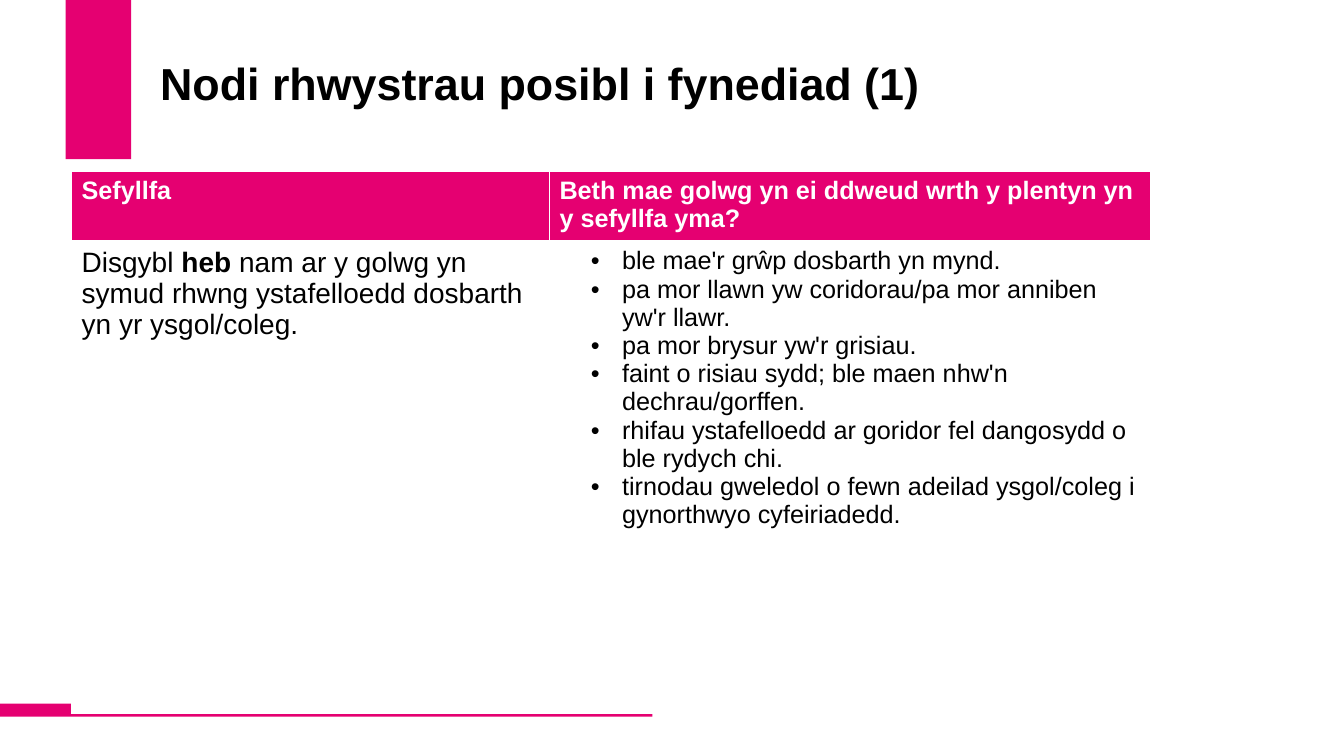
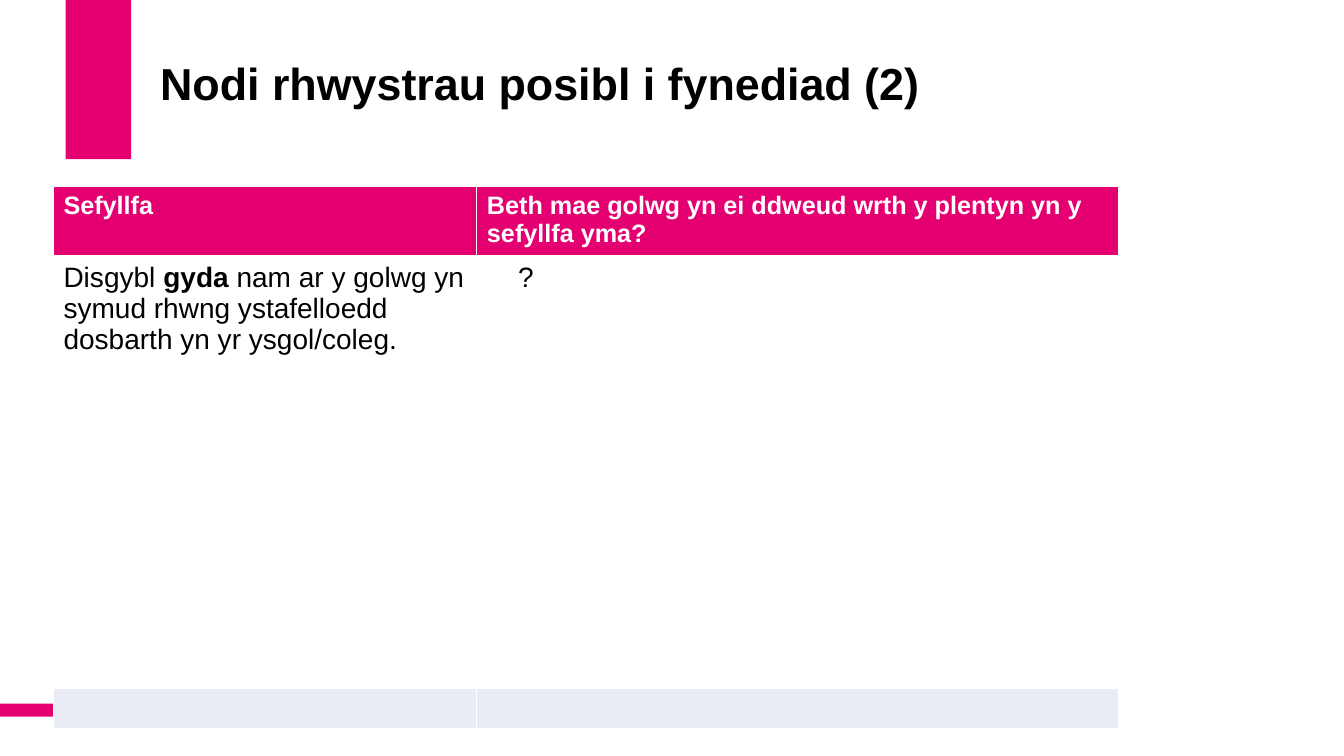
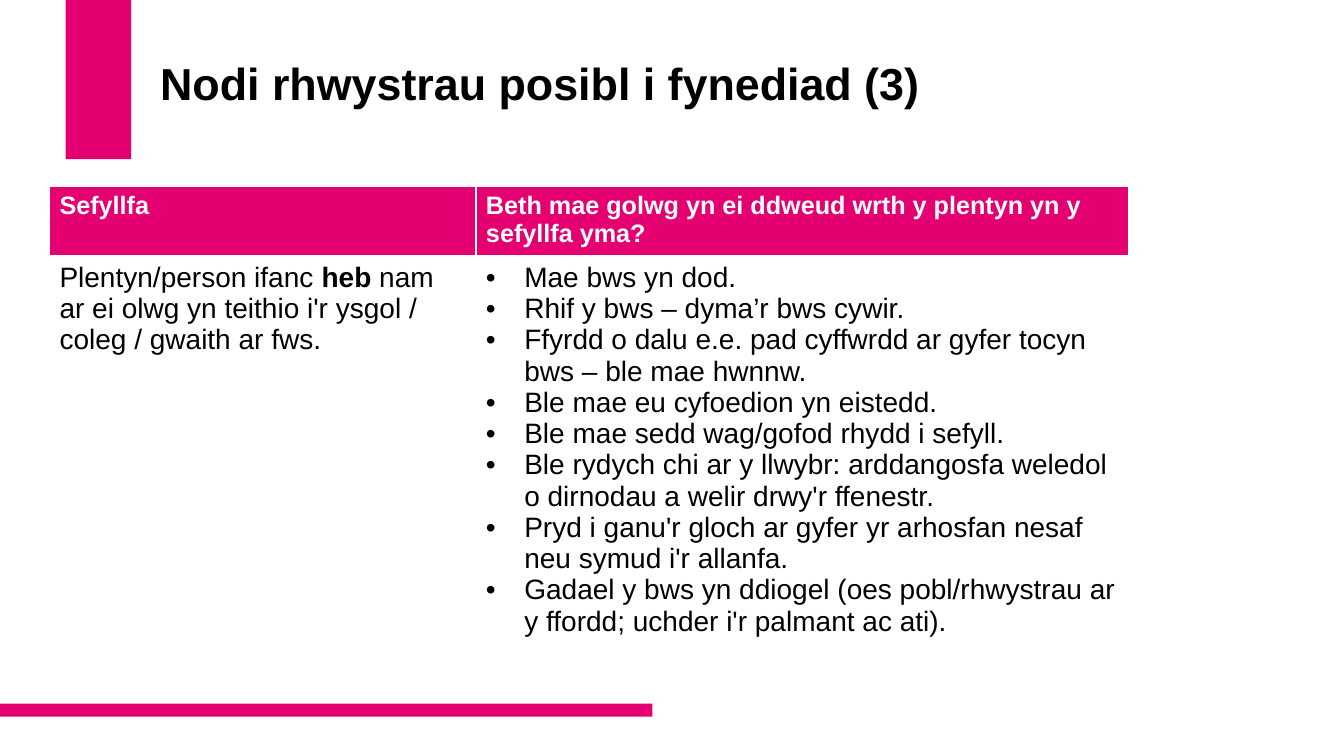
import pptx
import pptx.dml.color
import pptx.enum.shapes
import pptx.enum.text
import pptx.oxml.ns
import pptx.util
from lxml import etree

Inches = pptx.util.Inches
Pt = pptx.util.Pt
qn = pptx.oxml.ns.qn

COLOURS = {"accent": "E50071", "text": "000000", "paper": "FFFFFF", "stripe": "E9EBF5"}
FONT = "Arial"
HEADINGS = ["Sefyllfa", "Beth mae golwg yn ei ddweud wrth y plentyn yn y sefyllfa yma?"]
HEADING_HEIGHT = 0.64

SLIDES = [
    {
        "left": 0.71, "top": 1.7, "columns": [4.74, 5.96], "body_height": 4.68,
        "situation": ["Disgybl ", "heb", " nam ar y golwg yn symud rhwng ystafelloedd dosbarth yn yr ysgol/coleg."],
        "answers": [
            "ble mae'r grŵp dosbarth yn mynd.",
            "pa mor llawn yw coridorau/pa mor anniben yw'r llawr.",
            "pa mor brysur yw'r grisiau.",
            "faint o risiau sydd; ble maen nhw'n dechrau/gorffen.",
            "rhifau ystafelloedd ar goridor fel dangosydd o ble rydych chi.",
            "tirnodau gweledol o fewn adeilad ysgol/coleg i gynorthwyo cyfeiriadedd.",
        ],
        "answer_size": 18, "margin": 0.62, "hanging": 0.31,
    },
    {
        "left": 0.53, "top": 1.85, "columns": [4.2, 6.36], "body_height": 4.28,
        "situation": ["Disgybl ", "gyda", " nam ar y golwg yn symud rhwng ystafelloedd dosbarth yn yr ysgol/coleg."],
        "answers": ["?"],
        "answer_size": 20, "margin": 0.31, "hanging": 0,
        "stripe_height": 0.4,
    },
    {
        "left": 0.49, "top": 1.85, "columns": [4.23, 6.47], "body_height": 4,
        "situation": ["Plentyn/person ifanc ", "heb", " nam ar ei olwg yn teithio i'r ysgol / coleg / gwaith ar fws."],
        "answers": [
            "Mae bws yn dod.",
            "Rhif y bws – dyma’r bws cywir.",
            "Ffyrdd o dalu e.e. pad cyffwrdd ar gyfer tocyn bws – ble mae hwnnw.",
            "Ble mae eu cyfoedion yn eistedd.",
            "Ble mae sedd wag/gofod rhydd i sefyll.",
            "Ble rydych chi ar y llwybr: arddangosfa weledol o dirnodau a welir drwy'r ffenestr.",
            "Pryd i ganu'r gloch ar gyfer yr arhosfan nesaf neu symud i'r allanfa.",
            "Gadael y bws yn ddiogel (oes pobl/rhwystrau ar y ffordd; uchder i'r palmant ac ati).",
        ],
        "answer_size": 20, "margin": 0.38, "hanging": 0.38,
    },
]


def colour(name):
    return pptx.dml.color.RGBColor.from_string(COLOURS[name])


class Deck:
    """Holds the shared style and the slide being built."""

    def __init__(self):
        self.presentation = pptx.Presentation()
        self.presentation.slide_width = Inches(13.33)
        self.presentation.slide_height = Inches(7.5)
        self.slide = None

    def add_slide(self, title):
        self.slide = self.presentation.slides.add_slide(self.presentation.slide_layouts[6])
        self.add_band(0.65, 0, 0.65, 1.58)
        self.add_band(0, 6.98, 6.47, 0.13)
        self.add_title(title)

    def add_band(self, left, top, width, height):
        band = self.slide.shapes.add_shape(
            pptx.enum.shapes.MSO_SHAPE.RECTANGLE,
            Inches(left), Inches(top), Inches(width), Inches(height))
        band.shadow.inherit = False
        band.fill.solid()
        band.fill.fore_color.rgb = colour("accent")
        band.line.fill.background()

    def add_title(self, text):
        box = self.slide.shapes.add_textbox(Inches(1.49), Inches(0.4), Inches(9.6), Inches(0.9))
        frame = box.text_frame
        frame.word_wrap = True
        frame.vertical_anchor = pptx.enum.text.MSO_ANCHOR.MIDDLE
        paragraph = frame.paragraphs[0]
        paragraph.text = text
        paragraph.line_spacing = 0.9
        self.set_font(paragraph, 32, bold=True)

    def set_font(self, paragraph, size, bold=False, name="text"):
        paragraph.font.name = FONT
        paragraph.font.size = Pt(size)
        paragraph.font.bold = bold
        paragraph.font.color.rgb = colour(name)

    def add_table(self, left, top, columns, rows):
        """Add a table whose first row is the heading row."""
        frame = self.slide.shapes.add_table(
            len(rows), len(columns), Inches(left), Inches(top),
            Inches(sum(columns)), Inches(sum(rows)))
        table = frame.table
        table.horz_banding = False
        for column, width in zip(table.columns, columns):
            column.width = Inches(width)
        for row, height in zip(table.rows, rows):
            row.height = Inches(height)
        for cell, heading in zip(table.rows[0].cells, HEADINGS):
            self.style_cell(cell, "accent", bottom=3)
            paragraph = cell.text_frame.paragraphs[0]
            paragraph.text = heading
            self.set_font(paragraph, 18, bold=True, name="paper")
        return table

    def style_cell(self, cell, fill, bottom=1):
        """Give a cell white borders and a solid fill."""
        properties = cell._tc.get_or_add_tcPr()
        for side, width in (("L", 1), ("R", 1), ("T", 1), ("B", bottom)):
            line = etree.SubElement(properties, qn(f"a:ln{side}"), w=str(Pt(width)))
            solid = etree.SubElement(line, qn("a:solidFill"))
            etree.SubElement(solid, qn("a:srgbClr"), val=COLOURS["paper"])
        cell.fill.solid()
        cell.fill.fore_color.rgb = colour(fill)

    def fill_situation(self, cell, parts):
        """Write the situation with its middle part in bold."""
        paragraph = cell.text_frame.paragraphs[0]
        self.set_font(paragraph, 20)
        for index, text in enumerate(parts):
            run = paragraph.add_run()
            run.text = text
            run.font.bold = index == 1

    def fill_answers(self, cell, answers, size, margin, hanging):
        """Write one paragraph per answer, bulleted when the indent hangs."""
        frame = cell.text_frame
        for index, answer in enumerate(answers):
            paragraph = frame.add_paragraph() if index else frame.paragraphs[0]
            paragraph.text = answer
            properties = paragraph._p.get_or_add_pPr()
            properties.set("marL", str(Inches(margin)))
            properties.set("indent", str(-Inches(hanging)))
            if hanging:
                etree.SubElement(properties, qn("a:buFont"), typeface=FONT)
                etree.SubElement(properties, qn("a:buChar"), char="•")
            self.set_font(paragraph, size)


def main():
    deck = Deck()
    for number, content in enumerate(SLIDES, start=1):
        deck.add_slide(f"Nodi rhwystrau posibl i fynediad ({number})")
        rows = [HEADING_HEIGHT, content["body_height"]]
        if "stripe_height" in content:
            rows.append(content["stripe_height"])
        table = deck.add_table(content["left"], content["top"], content["columns"], rows)
        for row_index in range(1, len(rows)):
            for cell in table.rows[row_index].cells:
                deck.style_cell(cell, "paper" if row_index == 1 else "stripe")
        deck.fill_situation(table.cell(1, 0), content["situation"])
        deck.fill_answers(table.cell(1, 1), content["answers"], content["answer_size"],
                          content["margin"], content["hanging"])
    deck.presentation.save("out.pptx")


if __name__ == "__main__":
    main()
